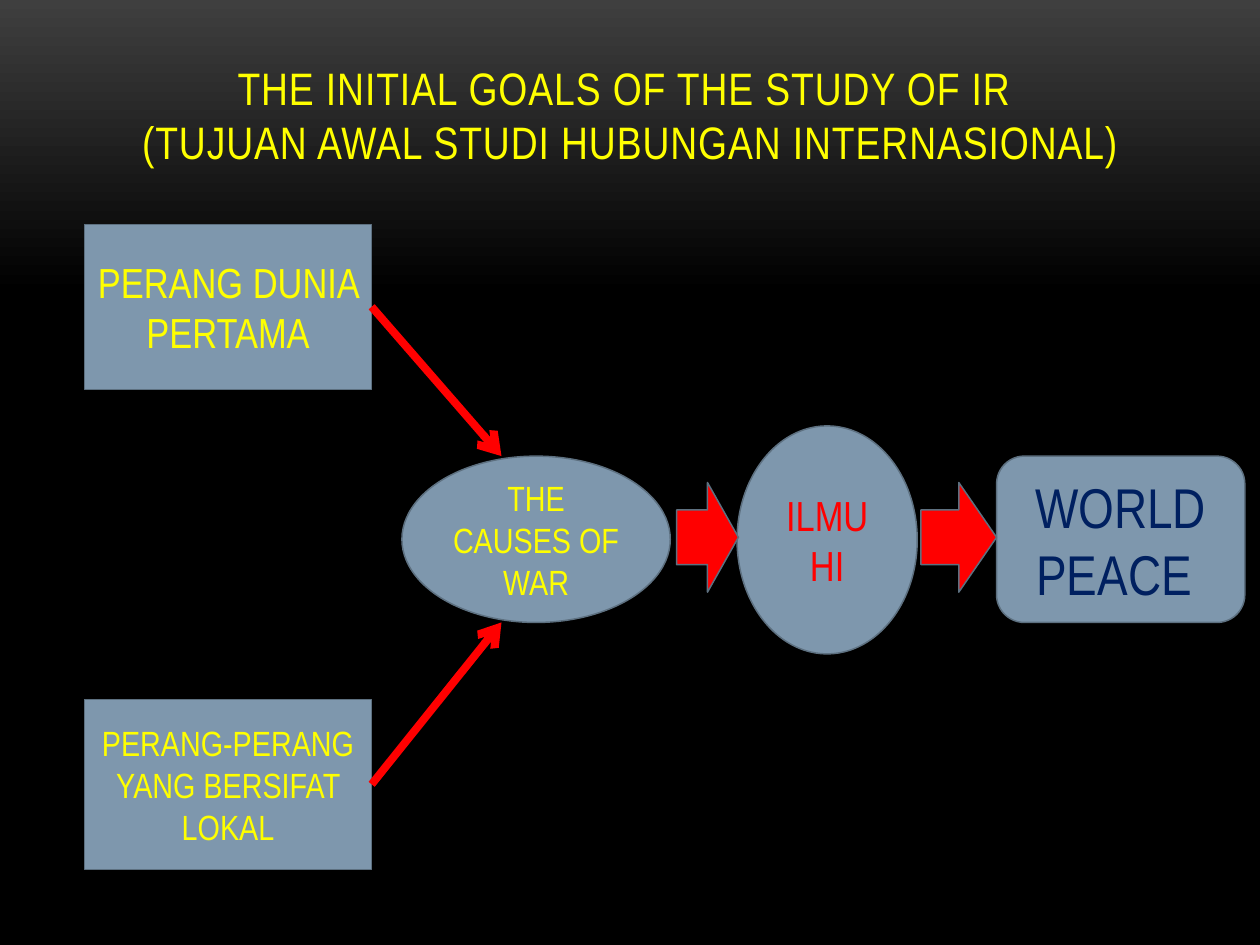
from copy import deepcopy

from lxml import etree
from pptx import Presentation
from pptx.dml.color import RGBColor
from pptx.enum.shapes import MSO_CONNECTOR, MSO_SHAPE
from pptx.enum.text import MSO_ANCHOR, PP_ALIGN
from pptx.oxml.ns import qn
from pptx.util import Inches, Pt

RECT, ROUND = MSO_SHAPE.RECTANGLE, MSO_SHAPE.ROUNDED_RECTANGLE
OVAL, ARROW = MSO_SHAPE.OVAL, MSO_SHAPE.RIGHT_ARROW
STRAIGHT = MSO_CONNECTOR.STRAIGHT
MIDDLE, BOTTOM = MSO_ANCHOR.MIDDLE, MSO_ANCHOR.BOTTOM
CENTER = PP_ALIGN.CENTER

FONT = "Arial Narrow"
BLUE, EDGE, NAVY = "7E97AD", "5D7080", "002060"
YELLOW, RED = "FFFF00", "FF0000"
RIGHT = 3  # connection site


def color(code):
    return RGBColor.from_string(code)


def paint_back(slide):
    fill = slide.background.fill
    fill.gradient()
    fill.gradient_angle = 270
    stops = slide.element.find(".//" + qn("a:gsLst"))
    stops.append(deepcopy(stops[-1]))
    marks = [(0, "3F3F3F"), (0.31, "000000"), (1, "000000")]
    for stop, (place, code) in zip(fill.gradient_stops, marks):
        stop.position = place
        stop.color.rgb = color(code)


def add_run(para, text, size, code):
    run = para.add_run()
    run.text = text
    run.font.name = FONT
    run.font.size = Pt(size)
    run.font.color.rgb = color(code)
    return run


def add_title(slide, lines):
    box = slide.shapes.add_textbox(
        Inches(0.67), Inches(0.3), Inches(8.67), Inches(1.09))
    frame = box.text_frame
    frame.word_wrap = True
    frame.vertical_anchor = BOTTOM
    para = frame.paragraphs[0]
    para.alignment = CENTER
    for i, line in enumerate(lines):
        if i:
            para.add_line_break()
        run = add_run(para, line, 26, YELLOW)
        run.font._element.set("spc", "50")


def add_node(slide, kind, area, fill=BLUE, text="", size=20, code=YELLOW):
    node = slide.shapes.add_shape(kind, *map(Inches, area))
    node.shadow.inherit = False
    node.fill.solid()
    node.fill.fore_color.rgb = color(fill)
    node.line.color.rgb = color(EDGE)
    node.line.width = Pt(0.85)
    if text:
        frame = node.text_frame
        frame.word_wrap = True
        frame.vertical_anchor = MIDDLE
        frame.margin_left = frame.margin_right = Inches(0.08)
        para = frame.paragraphs[0]
        para.alignment = CENTER
        add_run(para, text, size, code)
    return node


def add_link(slide, node, x, y):
    link = slide.shapes.add_connector(STRAIGHT, 0, 0, Inches(x), Inches(y))
    link.begin_connect(node, RIGHT)
    link.line.color.rgb = color(RED)
    link.line.width = Pt(4.5)
    etree.SubElement(link.line._get_or_add_ln(), qn("a:tailEnd"), type="arrow")
    etree.SubElement(link._element.spPr, qn("a:effectLst"))


def main():
    deck = Presentation()
    deck.slide_width, deck.slide_height = Inches(10), Inches(7.5)
    slide = deck.slides.add_slide(deck.slide_layouts[6])
    paint_back(slide)
    add_title(slide, ["THE INITIAL GOALS OF THE STUDY OF IR ",
                      "(TUJUAN AWAL STUDI HUBUNGAN INTERNASIONAL)"])

    # Wars that lead to the question
    world = add_node(slide, RECT, (0.67, 1.78, 2.28, 1.31),
                     text="PERANG DUNIA PERTAMA", size=24)
    local = add_node(slide, RECT, (0.67, 5.55, 2.28, 1.35),
                     text="PERANG-PERANG YANG BERSIFAT LOKAL")

    # Chain from causes to peace
    add_node(slide, OVAL, (3.19, 3.62, 2.13, 1.32), text="THE CAUSES OF WAR")
    add_node(slide, ROUND, (7.91, 3.62, 1.97, 1.32),
             text="WORLD PEACE ", size=32, code=NAVY)
    add_node(slide, OVAL, (5.85, 3.38, 1.43, 1.81),
             text="ILMU HI", size=24, code=RED)
    for left, width in ((5.37, 0.49), (7.31, 0.6)):
        add_node(slide, ARROW, (left, 3.83, width, 0.87), fill=RED)

    # Arrows from the wars to their causes
    add_link(slide, local, 3.98, 4.94)
    add_link(slide, world, 3.98, 3.62)
    deck.save("out.pptx")


if __name__ == "__main__":
    main()
